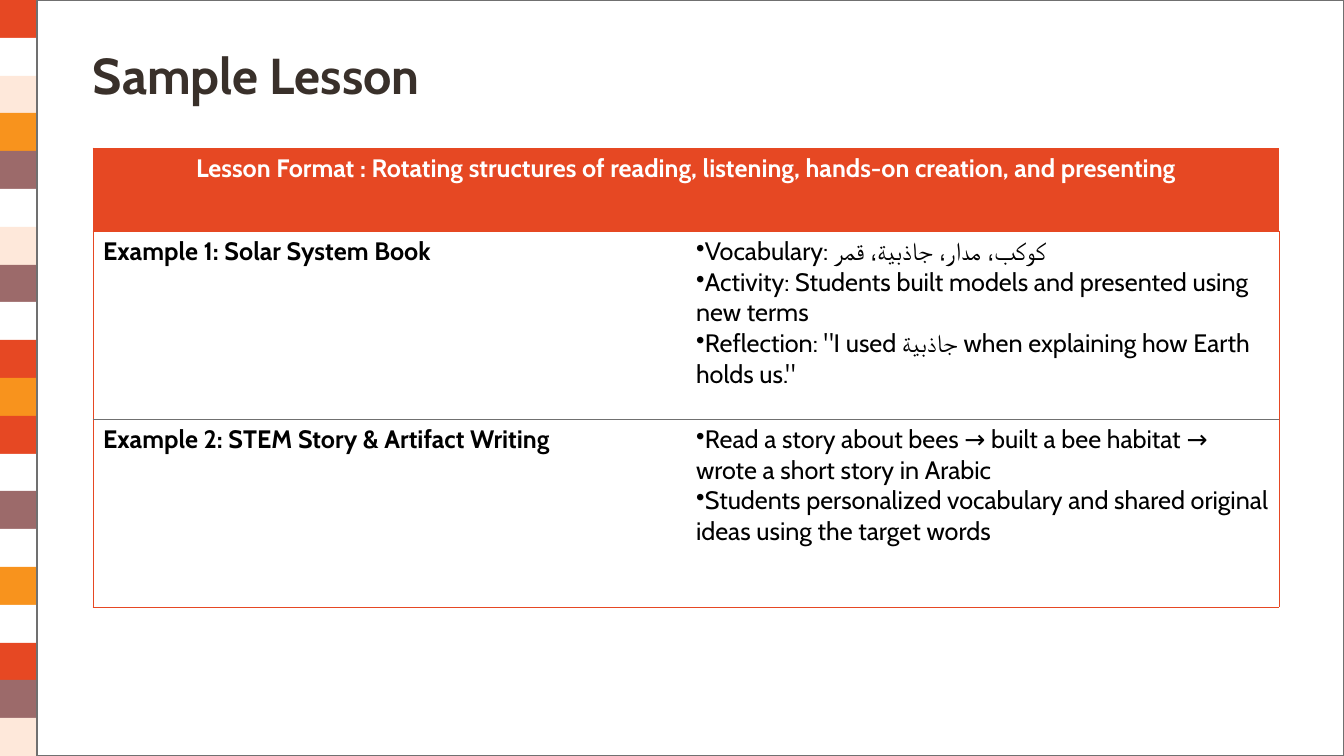
from pptx import Presentation
from pptx.dml.color import RGBColor
from pptx.enum.shapes import MSO_SHAPE as SHAPE
from pptx.enum.text import MSO_ANCHOR as ANCHOR, PP_ALIGN as ALIGN
from pptx.oxml.ns import qn
from pptx.util import Pt
from lxml.etree import SubElement

FONT = "Cabin"
EMU_PER_PX = 914400 / 100.8
W, H = 1344, 756
COLORS = {
    "red": "E64823", "orange": "F8931D", "mauve": "9C6A6A", "peach": "FEE8DA",
    "white": "FFFFFF", "gray": "707070", "title": "39302A", "black": "000000",
    "backdrop": "F5B5A7",
}
STRIPES = """red white peach orange mauve white peach mauve white red
             orange red white mauve white orange white red mauve peach""".split()

HEADER = ("Lesson Format : Rotating structures of reading, listening, "
          "hands-on creation, and presenting")
EXAMPLES = [
    ("Example 1: Solar System Book", [
        "Vocabulary: كوكب، مدار، جاذبية، قمر",
        "Activity: Students built models and presented using new terms",
        'Reflection: "I used جاذبية when explaining how Earth holds us."',
    ]),
    ("Example 2: STEM Story & Artifact Writing", [
        "Read a story about bees → built a bee habitat → wrote a short story in Arabic",
        "Students personalized vocabulary and shared original ideas using the target words",
    ]),
]


def px(n):
    return round(n * EMU_PER_PX)


def rgb(name):
    return RGBColor.from_string(COLORS[name])


def write(tf, lines, size=18, color="black", bold=False, align=ALIGN.LEFT,
          spacing=None, bullet=None):
    for i, line in enumerate(lines):
        p = tf.add_paragraph() if i else tf.paragraphs[0]
        p.alignment = align
        if spacing:
            p.line_spacing = spacing
        if bullet:
            SubElement(p._p.get_or_add_pPr(), qn("a:buChar"), char=bullet)
        r = p.add_run()
        r.text = line
        r.font.name, r.font.size, r.font.bold = FONT, Pt(size), bold
        r.font.color.rgb = rgb(color)


def add_rect(slide, x, y, w, h, fill, line=None):
    s = slide.shapes.add_shape(SHAPE.RECTANGLE, px(x), px(y), px(w), px(h))
    s.shadow.inherit = False
    s.fill.solid()
    s.fill.fore_color.rgb = rgb(fill)
    if line:
        s.line.color.rgb = rgb(line)
        s.line.width = Pt(1)
    else:
        s.line.fill.background()


def add_title(slide, text):
    tf = slide.shapes.add_textbox(px(93), px(51), px(387), px(93)).text_frame
    tf.word_wrap = True
    tf.vertical_anchor = ANCHOR.TOP
    tf.margin_left = 0
    write(tf, [text], size=36, color="title", bold=True, spacing=0.8)


def style_cell(cell, fill=None, **borders):
    # Borders come before the fill in the cell properties
    tcPr = cell._tc.get_or_add_tcPr()
    for side in "LRTB":
        ln = SubElement(tcPr, qn(f"a:ln{side}"), w=str(Pt(0.5)))
        if side in borders:
            solid = SubElement(ln, qn("a:solidFill"))
            SubElement(solid, qn("a:srgbClr"), val=COLORS[borders[side]])
        else:
            SubElement(ln, qn("a:noFill"))
    if fill:
        cell.fill.solid()
        cell.fill.fore_color.rgb = rgb(fill)
    else:
        cell.fill.background()


def add_lesson_table(slide):
    heights = [83, 188, 188]
    table = slide.shapes.add_table(3, 2, px(93), px(148), px(1186),
                                   px(sum(heights))).table
    table.first_row = table.horz_banding = False
    for row, h in zip(table.rows, heights):
        row.height = px(h)

    # Outer frame in red, a gray rule between the examples
    rules = ["red", "red", "gray", "red"]
    for i in range(3):
        for j, side in enumerate("LR"):
            style_cell(table.cell(i, j), None if i else "red",
                       **{side: "red", "T": rules[i], "B": rules[i + 1]})

    # Header across both columns
    head = table.cell(0, 0)
    head.merge(table.cell(0, 1))
    write(head.text_frame, [HEADER], color="white", bold=True, align=ALIGN.CENTER)

    # One row for each example
    for i, (name, points) in enumerate(EXAMPLES, 1):
        write(table.cell(i, 0).text_frame, [name], bold=True)
        write(table.cell(i, 1).text_frame, points, bullet="•")


def main():
    prs = Presentation()
    prs.slide_width, prs.slide_height = px(W), px(H)
    slide = prs.slides.add_slide(prs.slide_layouts[6])
    slide.background.fill.solid()
    slide.background.fill.fore_color.rgb = rgb("backdrop")

    # Striped band on the left
    edges = [round(i * H / len(STRIPES)) for i in range(len(STRIPES) + 1)]
    for color, top, bottom in zip(STRIPES, edges, edges[1:]):
        add_rect(slide, 0, top, 38, bottom - top, color)

    # White page and its content
    add_rect(slide, 37, 0, W - 37, H, "white", line="gray")
    add_title(slide, "Sample Lesson")
    add_lesson_table(slide)
    prs.save("out.pptx")


if __name__ == "__main__":
    main()
